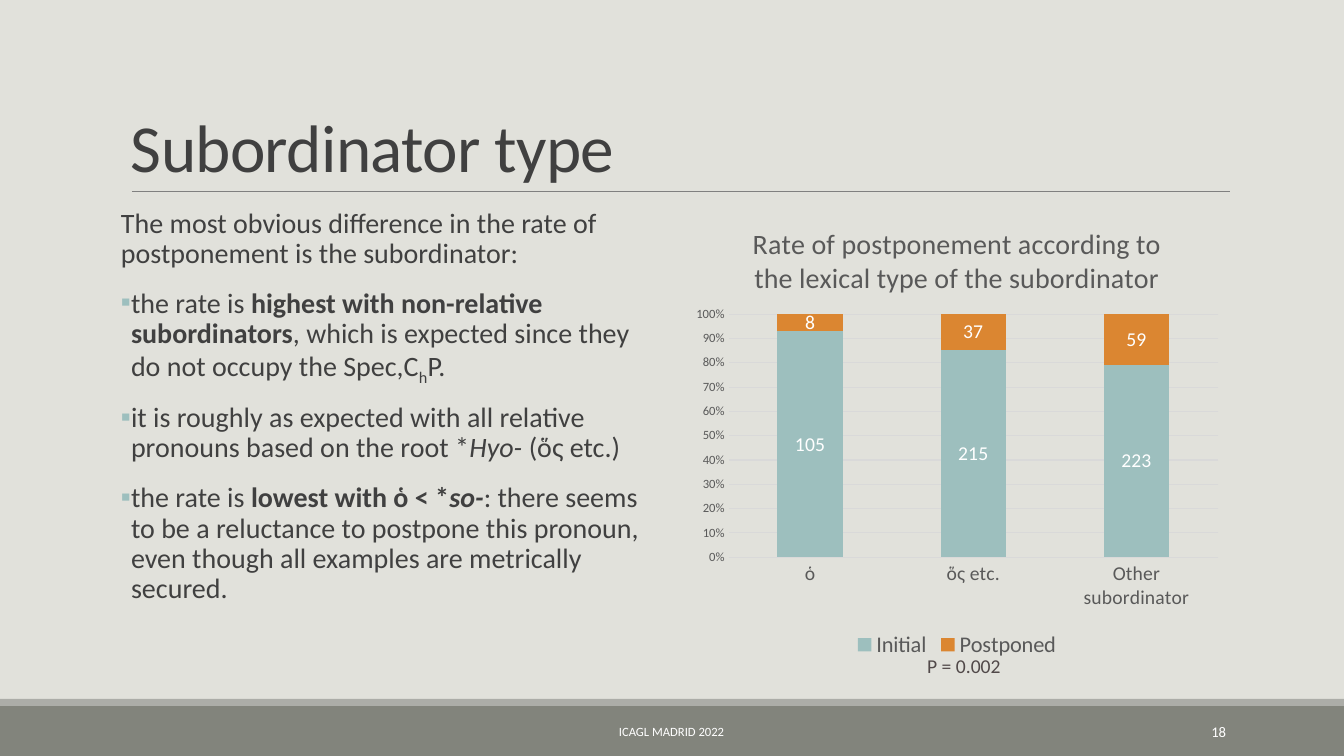
from lxml import etree
from pptx import Presentation
from pptx import util as u
from pptx.chart.data import CategoryChartData
from pptx.dml.color import RGBColor
from pptx.enum import chart as ch, shapes, text
from pptx.oxml import parse_xml
from pptx.oxml.ns import nsdecls, qn

PX = 914400 / 100.8
FONT = "Calibri"
PAPER = RGBColor(0xE1, 0xE1, 0xDB)
BAND = RGBColor(0x82, 0x84, 0x7C)
BAND_EDGE = RGBColor(0xAC, 0xAD, 0xA8)
RULE = RGBColor(0x80, 0x80, 0x80)
INK = RGBColor(0x40, 0x40, 0x40)
CHART_INK = RGBColor(0x59, 0x59, 0x59)
NOTE_INK = RGBColor(0x51, 0x49, 0x49)
GRID = RGBColor(0xD9, 0xD9, 0xD9)
TEAL = RGBColor(0x9D, 0xBF, 0xBE)
ORANGE = RGBColor(0xDB, 0x86, 0x31)
WHITE = RGBColor(0xFF, 0xFF, 0xFF)

# Each paragraph: (bulleted, [(words, style)])
BODY = [
    (False, [("The most obvious difference in the rate of postponement is the subordinator:", "")]),
    (True, [("the rate is ", ""), ("highest with non-relative subordinators", "b"),
            (", which is expected since they do not occupy the Spec,C", ""),
            ("h", "sub"), ("P.", "")]),
    (True, [("it is roughly as expected with all relative pronouns based on the root *", ""),
            ("Hyo- ", "i"), ("(ὅς etc.)", "")]),
    (True, [("the rate is ", ""), ("lowest with ὁ < *", "b"), ("so-", "bi"),
            (": there seems to be a reluctance to postpone this pronoun, "
             "even though all examples are metrically secured.", "")]),
]
CATEGORIES = ["ὁ", "ὅς etc.", "Other subordinator"]
SERIES = [("Initial", [105, 215, 223], TEAL), ("Postponed", [8, 37, 59], ORANGE)]


def px(*lengths):
    return [u.Emu(round(length * PX)) for length in lengths]


def style_font(font, size, color):
    font.name, font.size, font.bold = FONT, u.Pt(size), False
    font.color.rgb = color


def add_text(page, box, words, size, color, align=text.PP_ALIGN.LEFT,
             anchor=text.MSO_ANCHOR.MIDDLE):
    frame = page.shapes.add_textbox(*px(*box)).text_frame
    frame.word_wrap = True
    frame.vertical_anchor = anchor
    frame.text = words
    para = frame.paragraphs[0]
    para.alignment = align
    style_font(para.runs[0].font, size, color)
    return para


def add_band(page, box, color):
    band = page.shapes.add_shape(shapes.MSO_SHAPE.RECTANGLE, *px(*box))
    band.shadow.inherit = False
    band.fill.solid()
    band.fill.fore_color.rgb = color
    band.line.fill.background()


def add_footer(page, box):
    left, top, width, height = box
    add_band(page, (left, top + 7, width, height - 7), BAND)
    add_band(page, (left, top, width, 7), BAND_EDGE)
    add_text(page, (left + 406, top + 13, 531, 40), "ICAGL MADRID 2022", 9, WHITE,
             text.PP_ALIGN.CENTER)
    add_text(page, (left + 1092, top + 13, 144, 40), "18", 10.5, WHITE, text.PP_ALIGN.RIGHT)


def add_title(page, box):
    left, top, width, height = box
    para = add_text(page, box, "Subordinator type", 48, INK, anchor=text.MSO_ANCHOR.BOTTOM)
    para.line_spacing = 0.85
    para.runs[0].font._element.set("spc", "-50")
    base = top + height
    rule = page.shapes.add_connector(shapes.MSO_CONNECTOR.STRAIGHT,
                                     *px(left + 11, base, left + width, base))
    rule.line.color.rgb = RULE
    rule.line.width = u.Pt(0.5)
    etree.SubElement(rule._element.spPr, qn("a:effectLst"))


def add_bullet(para):
    props = para._p.get_or_add_pPr()
    props.set("marL", "91440")
    props.set("indent", "-91440")
    color = etree.SubElement(props, qn("a:buClr"))
    etree.SubElement(color, qn("a:srgbClr"), val=str(TEAL))
    etree.SubElement(props, qn("a:buFont"), typeface=FONT)
    etree.SubElement(props, qn("a:buChar"), char="▪")


def add_body(page, box):
    frame = page.shapes.add_textbox(*px(*box)).text_frame
    frame.word_wrap = True
    frame.margin_left = frame.margin_right = 0
    for index, (bulleted, spans) in enumerate(BODY):
        para = frame.add_paragraph() if index else frame.paragraphs[0]
        para.line_spacing = 0.9
        para.space_before, para.space_after = u.Pt(12), u.Pt(2)
        if bulleted:
            add_bullet(para)
        for words, style in spans:
            span = para.add_run()
            span.text = words
            style_font(span.font, 20, INK)
            if style == "sub":
                span.font._element.set("baseline", "-25000")
            else:
                span.font.bold = "b" in style
                span.font.italic = "i" in style


def place_plot(chart, left, top, width, height):
    """Fix the inner plot area, in fractions of the chart."""
    plot_area = chart._chartSpace.chart.plotArea
    for old in plot_area.findall(qn("c:layout")):
        plot_area.remove(old)
    plot_area.insert(0, parse_xml(
        f'<c:layout {nsdecls("c")}><c:manualLayout><c:layoutTarget val="inner"/>'
        f'<c:xMode val="edge"/><c:yMode val="edge"/><c:x val="{left}"/><c:y val="{top}"/>'
        f'<c:w val="{width}"/><c:h val="{height}"/></c:manualLayout></c:layout>'))


def add_rate_chart(page, box):
    data = CategoryChartData()
    data.categories = CATEGORIES
    for name, values, _ in SERIES:
        data.add_series(name, values)
    chart = page.shapes.add_chart(ch.XL_CHART_TYPE.COLUMN_STACKED_100, *px(*box), data).chart
    style_font(chart.font, 10, CHART_INK)

    # Title and legend
    frame = chart.chart_title.text_frame
    frame.text = "Rate of postponement according to the lexical type of the subordinator"
    style_font(frame.paragraphs[0].runs[0].font, 20, CHART_INK)
    chart.chart_title.include_in_layout = False
    chart.has_legend = True
    chart.legend.position = ch.XL_LEGEND_POSITION.BOTTOM
    chart.legend.include_in_layout = False
    style_font(chart.legend.font, 16, CHART_INK)

    # Axes
    for axis, size in ((chart.category_axis, 14), (chart.value_axis, 9)):
        axis.major_tick_mark = axis.minor_tick_mark = ch.XL_TICK_MARK.NONE
        style_font(axis.tick_labels.font, size, CHART_INK)
    values = chart.value_axis
    values.has_major_gridlines = True
    values.format.line.fill.background()
    values.tick_labels.number_format = "0%"
    values.tick_labels.number_format_is_linked = False
    values.maximum_scale, values.major_unit = 1, 0.1
    for line in (chart.category_axis.format.line, values.major_gridlines.format.line):
        line.color.rgb = GRID
        line.width = u.Pt(0.75)

    # Columns
    plot = chart.plots[0]
    plot.gap_width, plot.overlap, plot.vary_by_categories = 150, 100, False
    for series, (_, _, color) in zip(plot.series, SERIES):
        series.format.fill.solid()
        series.format.fill.fore_color.rgb = color
        labels = series.data_labels
        labels.show_value = True
        labels.position = ch.XL_LABEL_POSITION.CENTER
        style_font(labels.font, 14, WHITE)
    place_plot(chart, 0.08, 0.24, 0.9, 0.53)


def main():
    deck = Presentation()
    deck.slide_width, deck.slide_height = px(1344, 756)
    page = deck.slides.add_slide(deck.slide_layouts[6])
    page.background.fill.solid()
    page.background.fill.fore_color.rgb = PAPER
    add_footer(page, (0, 699, 1344, 57))
    add_title(page, (121, 31, 1109, 160))
    add_body(page, (121, 204, 544, 444))
    add_rate_chart(page, (685, 204, 544, 459))
    add_text(page, (698, 649, 532, 34), "P = 0.002", 14, NOTE_INK, text.PP_ALIGN.CENTER,
             text.MSO_ANCHOR.TOP)
    deck.save("out.pptx")


if __name__ == "__main__":
    main()
